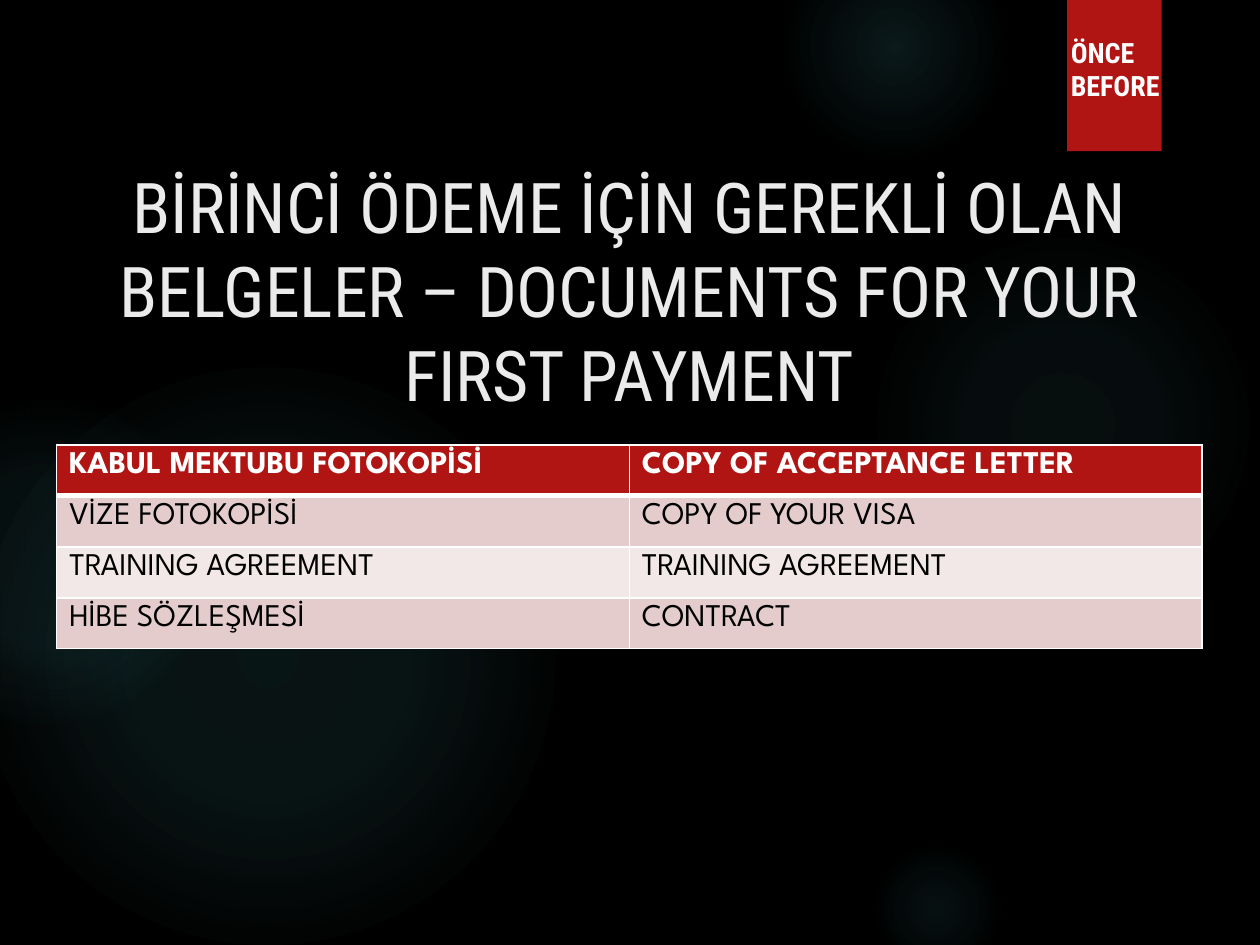
from dataclasses import dataclass

from lxml import etree
from pptx import Presentation
from pptx.dml.color import RGBColor
from pptx.enum.shapes import MSO_SHAPE
from pptx.enum.text import MSO_ANCHOR, PP_ALIGN
from pptx.oxml import parse_xml
from pptx.oxml.ns import nsdecls
from pptx.util import Inches, Pt

ELLIPSE = MSO_SHAPE.OVAL
RECTANGLE = MSO_SHAPE.RECTANGLE
TOP = MSO_ANCHOR.TOP
CENTER = PP_ALIGN.CENTER
LEFT = PP_ALIGN.LEFT


@dataclass(frozen=True)
class Theme:
    background: str = "000000"
    glow: str = "50B9C1"
    accent: str = "B01513"
    title: str = "EBEBEB"
    white: str = "FFFFFF"
    black: str = "000000"
    bands: tuple = ("F2E8E7", "E4CCCC")
    heading_font: str = "Roboto Condensed"
    table_font: str = "League Spartan"
    title_size: int = 40
    table_size: int = 18
    tag_size: int = 16


theme = Theme()


def style_paragraph(para, font_name, size, color, bold=False, align=LEFT):
    para.alignment = align
    para.font.name = font_name
    para.font.size = Pt(size)
    para.font.bold = bold
    para.font.color.rgb = RGBColor.from_string(color)


def glow_fill(stops):
    stop_xml = "".join(
        f'<a:gs pos="{position * 1000}"><a:srgbClr val="{theme.glow}">'
        f'<a:alpha val="{opacity * 1000}"/></a:srgbClr></a:gs>'
        for position, opacity in stops
    )
    return parse_xml(
        f'<a:gradFill {nsdecls("a")} rotWithShape="1"><a:gsLst>{stop_xml}</a:gsLst>'
        '<a:path path="circle"><a:fillToRect l="50000" t="50000" r="50000" b="50000"/>'
        "</a:path></a:gradFill>"
    )


deck = Presentation()
deck.slide_width = Inches(10)
deck.slide_height = Inches(7.5)
page = deck.slides.add_slide(deck.slide_layouts[5])
page.background.fill.solid()
page.background.fill.fore_color.rgb = RGBColor.from_string(theme.background)

glows = [
    (6.89, 1.83, 3.08, [(0, 7), (36, 6), (69, 0)]),
    (6.22, -0.5, 1.75, [(0, 14), (36, 7), (73, 0)]),
    (6.89, 6.67, 1.08, [(0, 9), (36, 5), (66, 0)]),
    (-0.17, 2.92, 4.58, [(0, 11), (36, 10), (75, 0)]),
    (-0.92, 3.17, 2.58, [(0, 8), (36, 8), (72, 0)]),
]
for left, top, diameter, stops in glows:
    glow = page.shapes.add_shape(
        ELLIPSE, Inches(left), Inches(top), Inches(diameter), Inches(diameter)
    )
    glow.shadow.inherit = False
    glow.line.fill.background()
    glow.fill.background()
    properties = glow._element.spPr
    properties.replace(properties.find("{*}noFill"), glow_fill(stops))

tag = page.shapes.add_shape(RECTANGLE, Inches(8.47), 0, Inches(0.75), Inches(1.2))
tag.shadow.inherit = False
tag.line.fill.background()
tag.fill.solid()
tag.fill.fore_color.rgb = RGBColor.from_string(theme.accent)

title = page.shapes.title
title.left, title.top = Inches(0.45), Inches(1.25)
title.width, title.height = Inches(9.09), Inches(1.59)
title.text_frame.text = "BİRİNCİ ÖDEME İÇİN GEREKLİ OLAN BELGELER – DOCUMENTS FOR YOUR FIRST PAYMENT"
title.text_frame.word_wrap = True
title.text_frame.vertical_anchor = TOP
style_paragraph(
    title.text_frame.paragraphs[0],
    theme.heading_font, theme.title_size, theme.title, align=CENTER,
)
page.shapes._spTree.append(title._element)

documents = [
    ("KABUL MEKTUBU FOTOKOPİSİ", "COPY OF ACCEPTANCE LETTER"),
    ("VİZE FOTOKOPİSİ", "COPY OF YOUR VISA"),
    ("TRAINING AGREEMENT", "TRAINING AGREEMENT"),
    ("HİBE SÖZLEŞMESİ", "CONTRACT"),
]
table = page.shapes.add_table(
    len(documents), 2, Inches(0.45), Inches(3.53), Inches(9.09), Inches(1.62)
).table
for row_index, names in enumerate(documents):
    header = row_index == 0
    for column_index, name in enumerate(names):
        cell = table.cell(row_index, column_index)
        cell.text = name
        style_paragraph(
            cell.text_frame.paragraphs[0],
            theme.table_font, theme.table_size,
            theme.white if header else theme.black, bold=header,
        )
        cell_properties = cell._tc.get_or_add_tcPr()
        for side in ("lnL", "lnR", "lnT", "lnB"):
            heavy = (header and side == "lnB") or (row_index == 1 and side == "lnT")
            border = parse_xml(
                f'<a:{side} {nsdecls("a")} w="{Pt(3 if heavy else 1)}"/>'
            )
            solid = etree.SubElement(border, border.tag.replace(side, "solidFill"))
            etree.SubElement(
                solid, border.tag.replace(side, "srgbClr"), val=theme.white
            )
            cell_properties.append(border)
        cell.fill.solid()
        cell.fill.fore_color.rgb = RGBColor.from_string(
            theme.accent if header else theme.bands[row_index % 2]
        )

tag_box = page.shapes.add_textbox(Inches(8.4), Inches(0.23), Inches(0.92), Inches(0.64))
tag_box.text_frame.word_wrap = True
tag_box.text_frame.text = "ÖNCE\nBEFORE"
for para in tag_box.text_frame.paragraphs:
    style_paragraph(para, theme.heading_font, theme.tag_size, theme.white, bold=True)

deck.save("out.pptx")
